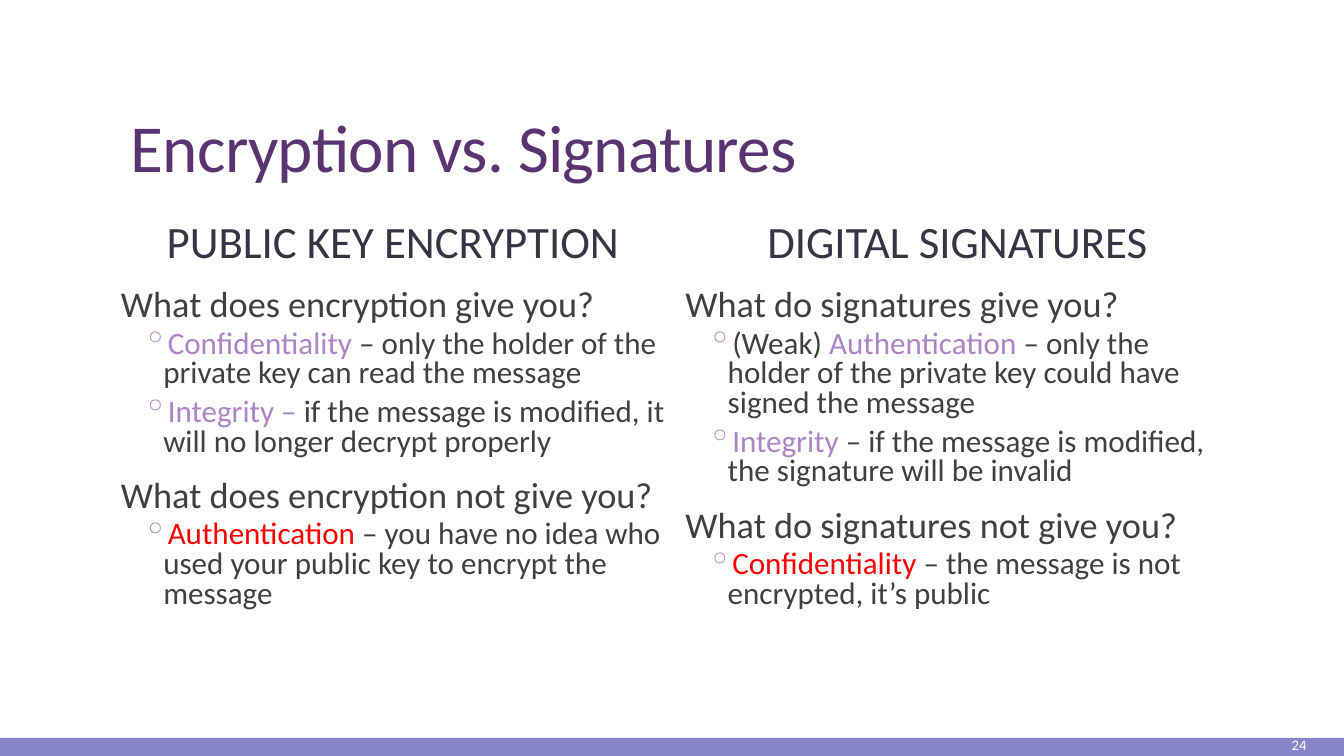
from lxml import etree
from pptx import Presentation
from pptx.dml.color import RGBColor
from pptx.enum import shapes, text
from pptx.oxml import ns
from pptx.util import Pt

# Content
PURPLE, RED, GREY, NAVY = "AD84C6", "FF0000", "404040", "373545"
TITLE = "Encryption vs. Signatures"
PAGE_NUMBER = "24"
# Each topic: heading, then questions with their answers as (text, colour) runs
TOPICS = [
    ("PUBLIC KEY ENCRYPTION", [
        ("What does encryption give you?", [
            [("Confidentiality ", PURPLE),
             ("– only the holder of the private key can read the message", GREY)],
            [("Integrity – ", PURPLE),
             ("if the message is modified, it will no longer decrypt properly", GREY)],
        ]),
        ("What does encryption not give you?", [
            [("Authentication ", RED),
             ("– you have no idea who used your public key to encrypt the message", GREY)],
        ]),
    ]),
    ("DIGITAL SIGNATURES", [
        ("What do signatures give you?", [
            [("(Weak)", GREY), (" Authentication", PURPLE),
             (" – only the holder of the private key could have signed the message", GREY)],
            [("Integrity", PURPLE),
             (" – if the message is modified, the signature will be invalid", GREY)],
        ]),
        ("What do signatures not give you?", [
            [("Confidentiality", RED),
             (" – the message is not encrypted, it’s public", GREY)],
        ]),
    ]),
]

# Layout in points
WIDTH, HEIGHT = 960, 540
LEFT, COLUMN_WIDTH, COLUMN_STEP = 86.4, 388.8, 403.2
FOOTER_TOP = 527.04


def color(hex_string):
    return RGBColor.from_string(hex_string)


def add_panel(left, top, width, height, fill):
    panel = slide.shapes.add_shape(shapes.MSO_SHAPE.RECTANGLE,
                                   Pt(left), Pt(top), Pt(width), Pt(height))
    panel.shadow.inherit = False
    panel.fill.solid()
    panel.fill.fore_color.rgb = color(fill)
    panel.line.fill.background()
    return panel


def add_box(left, top, width, height, anchor, side=7.2, fill=None):
    if fill:
        box = add_panel(left, top, width, height, fill)
    else:
        box = slide.shapes.add_textbox(Pt(left), Pt(top), Pt(width), Pt(height))
    frame = box.text_frame
    frame.word_wrap = True
    frame.auto_size = text.MSO_AUTO_SIZE.NONE
    frame.vertical_anchor = anchor
    frame.margin_left = frame.margin_right = Pt(side)
    return frame


def add_text(frame, runs, size, align=text.PP_ALIGN.LEFT, line=1.0,
             before=0, after=0, bullet=None, tracking=0):
    first = not frame.paragraphs[0].runs
    paragraph = frame.paragraphs[0] if first else frame.add_paragraph()
    paragraph.alignment = align
    paragraph.line_spacing = line
    paragraph.space_before = Pt(0 if first else before)
    paragraph.space_after = Pt(after)
    if bullet:
        paragraph.level = 1
        props = paragraph._p.get_or_add_pPr()
        props.set("marL", str(Pt(30.24)))
        props.set("indent", str(Pt(-14.4)))
        bullet_color = etree.SubElement(props, ns.qn("a:buClr"))
        etree.SubElement(bullet_color, ns.qn("a:srgbClr"), val=PURPLE)
        etree.SubElement(props, ns.qn("a:buChar"), char=bullet)
    for words, hex_string in runs:
        run = paragraph.add_run()
        run.text = words
        run.font.name = "Calibri"
        run.font.size = Pt(size)
        run.font.color.rgb = color(hex_string)
        if tracking:
            run._r.get_or_add_rPr().set("spc", str(int(tracking * 100)))


presentation = Presentation()
presentation.slide_width, presentation.slide_height = Pt(WIDTH), Pt(HEIGHT)
slide = presentation.slides.add_slide(presentation.slide_layouts[6])

# Footer band
add_panel(0, FOOTER_TOP, WIDTH, HEIGHT - FOOTER_TOP, "8784C7")

# Title
title = add_box(LEFT, 22.32, 792, 114.48, text.MSO_ANCHOR.BOTTOM)
add_text(title, [(TITLE, "5A3471")], 48, line=0.85, tracking=-0.5)

# Two topic columns
for column, (topic, questions) in enumerate(TOPICS):
    left = LEFT + column * COLUMN_STEP
    heading = add_box(left, 145.44, COLUMN_WIDTH, 58.32, text.MSO_ANCHOR.MIDDLE,
                      fill="FFFFFF")
    add_text(heading, [(topic, NAVY)], 32, align=text.PP_ALIGN.CENTER, line=0.9)
    body = add_box(left, 203.4, COLUMN_WIDTH, 258.48, text.MSO_ANCHOR.TOP, side=0)
    for question, answers in questions:
        add_text(body, [(question, GREY)], 25.9, line=0.8, before=12, after=2)
        for answer in answers:
            add_text(body, answer, 22.2, line=0.8, before=2, after=4, bullet="◦")

# Page number
number = add_box(837.36, FOOTER_TOP, 102.96, 10.08, text.MSO_ANCHOR.MIDDLE)
add_text(number, [(PAGE_NUMBER, "FFFFFF")], 10.5, align=text.PP_ALIGN.RIGHT)

presentation.save("out.pptx")
